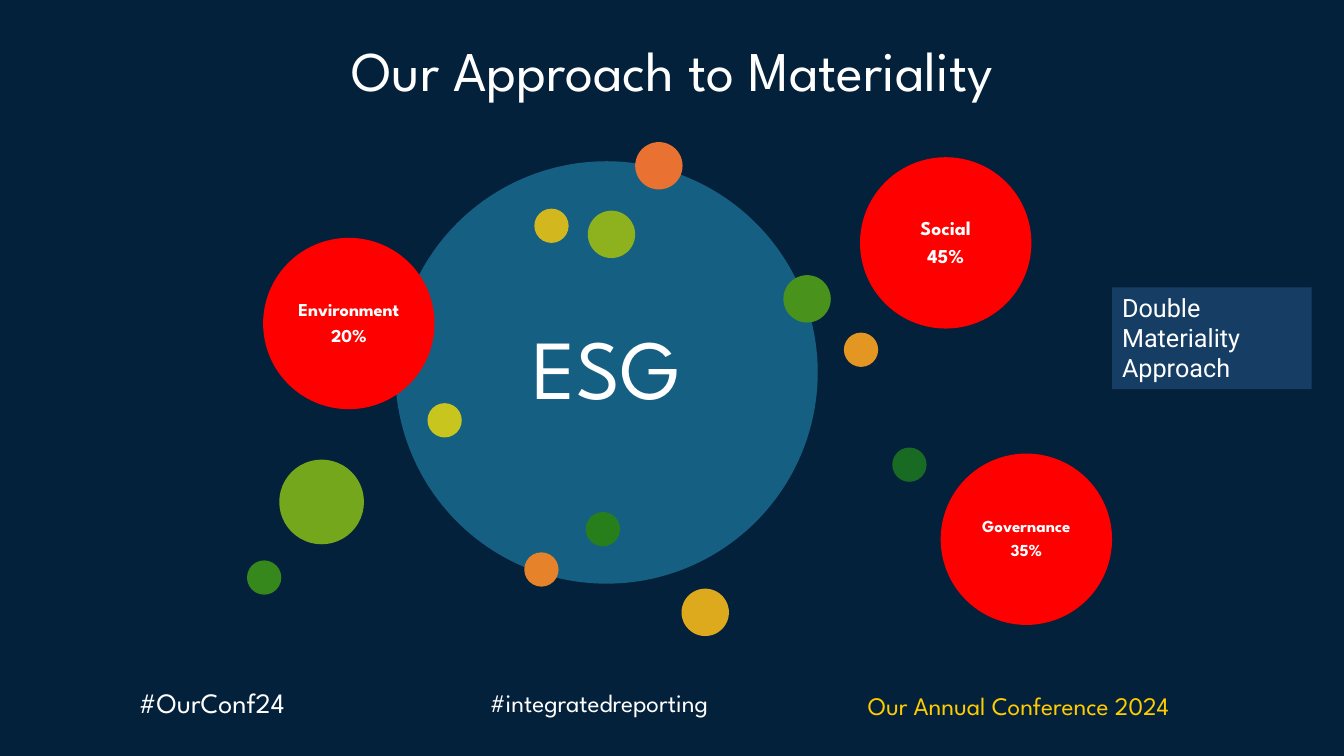
import pptx
import pptx.util
import pptx.dml.color
import pptx.enum.shapes
import pptx.enum.text

Inches, Pt = pptx.util.Inches, pptx.util.Pt
SHAPE = pptx.enum.shapes.MSO_SHAPE
ALIGN = pptx.enum.text.PP_ALIGN
ANCHOR = pptx.enum.text.MSO_ANCHOR

THEME = {
    "background": "04213B", "core": "156082", "pillar": "FF0000", "panel": "163E64",
    "white": "FFFFFF", "gold": "FFCC00",
    "display": "League Spartan", "body": "Roboto",
    "title": 40, "core_size": 60, "hashtag": 20, "text": 18,
}
SMALL, MEDIUM, LARGE = 0.34, 0.47, 0.84

# Content: left, top, then what each part needs
TITLE = "Our Approach to Materiality"
CORE = ("ESG", 3.92, 1.6, 4.19)
PILLARS = [  # name, share, left, top, type size, inset
    ("Environment", "20%", 2.61, 2.36, 13, 0.05),
    ("Social", "45%", 8.53, 1.56, 14, 0.06),
    ("Governance", "35%", 9.33, 4.5, 12, 0.05),
]
PILLAR_DIAMETER = 1.7
DOTS = [  # left, top, diameter, colour
    (6.3, 1.41, MEDIUM, "E97132"),
    (5.2, 5.48, SMALL, "E6832A"),
    (8.37, 3.3, SMALL, "E49622"),
    (6.76, 5.84, MEDIUM, "DDA91D"),
    (5.3, 2.07, SMALL, "D2B81E"),
    (4.24, 4, SMALL, "C7C51E"),
    (5.83, 2.09, MEDIUM, "8EB21E"),
    (2.77, 4.56, LARGE, "75A71D"),
    (7.77, 2.73, MEDIUM, "49931D"),
    (2.45, 5.56, SMALL, "37881C"),
    (5.81, 5.08, SMALL, "277F1B"),
    (8.85, 4.44, SMALL, "196B24"),
]
FOOTERS = [  # text, box, type size, colour
    ("#OurConf24", (1.28, 6.75, 1.85, 0.44), THEME["hashtag"], THEME["white"]),
    ("#integratedreporting", (4.76, 6.77, 2.79, 0.4), THEME["text"], THEME["white"]),
    ("Our Annual Conference 2024", (8.51, 6.8, 3.76, 0.4), THEME["text"], THEME["gold"]),
]
PANEL = ("Double Materiality Approach", (11.03, 2.85, 1.98, 1.01))


def colour(code):
    return pptx.dml.color.RGBColor.from_string(code)


def write(shape, lines, size, code=THEME["white"], font=THEME["display"], bold=False,
          align=ALIGN.LEFT, anchor=ANCHOR.TOP, spacing=None, after=0, inset=None):
    frame = shape.text_frame
    frame.text = "\n".join(lines)
    frame.word_wrap = True
    frame.vertical_anchor = anchor
    if inset is not None:
        frame.margin_left = frame.margin_right = Inches(inset)
        frame.margin_top = frame.margin_bottom = Inches(inset)
    for para in frame.paragraphs:
        para.alignment = align
        para.space_after = Pt(after)
        if spacing:
            para.line_spacing = spacing
        for span in para.runs:
            span.font.name = font
            span.font.size = Pt(size)
            span.font.bold = bold
            span.font.color.rgb = colour(code)


def add_shape(page, kind, box, fill):
    shape = page.shapes.add_shape(kind, *map(Inches, box))
    shape.shadow.inherit = False
    shape.fill.solid()
    shape.fill.fore_color.rgb = colour(fill)
    shape.line.fill.background()
    return shape


def add_circle(page, left, top, diameter, fill):
    return add_shape(page, SHAPE.OVAL, (left, top, diameter, diameter), fill)


def add_text(page, box, text, size, **style):
    write(page.shapes.add_textbox(*map(Inches, box)), [text], size, **style)


def main():
    deck = pptx.Presentation()
    deck.slide_width, deck.slide_height = Inches(13.33), Inches(7.5)
    page = deck.slides.add_slide(deck.slide_layouts[6])
    page.background.fill.solid()
    page.background.fill.fore_color.rgb = colour(THEME["background"])
    centred = {"align": ALIGN.CENTER, "anchor": ANCHOR.MIDDLE, "spacing": 0.9}

    # Footer and title
    for text, box, size, code in FOOTERS:
        add_text(page, box, text, size, code=code)
    add_text(page, (0.92, 0, 11.5, 1.45), TITLE, THEME["title"], **centred)

    # Central circle
    name, left, top, diameter = CORE
    core = add_circle(page, left, top, diameter, THEME["core"])
    write(core, [name], THEME["core_size"], inset=0.25, **centred)

    # Pillars and the dots around them
    for name, share, left, top, size, inset in PILLARS:
        pillar = add_circle(page, left, top, PILLAR_DIAMETER, THEME["pillar"])
        write(pillar, [name, share], size, bold=True, after=0.35 * size, inset=inset, **centred)
    for dot in DOTS:
        add_circle(page, *dot)

    # Side panel
    text, box = PANEL
    panel = add_shape(page, SHAPE.RECTANGLE, box, THEME["panel"])
    write(panel, [text], THEME["text"], font=THEME["body"])

    deck.save("out.pptx")


if __name__ == "__main__":
    main()
